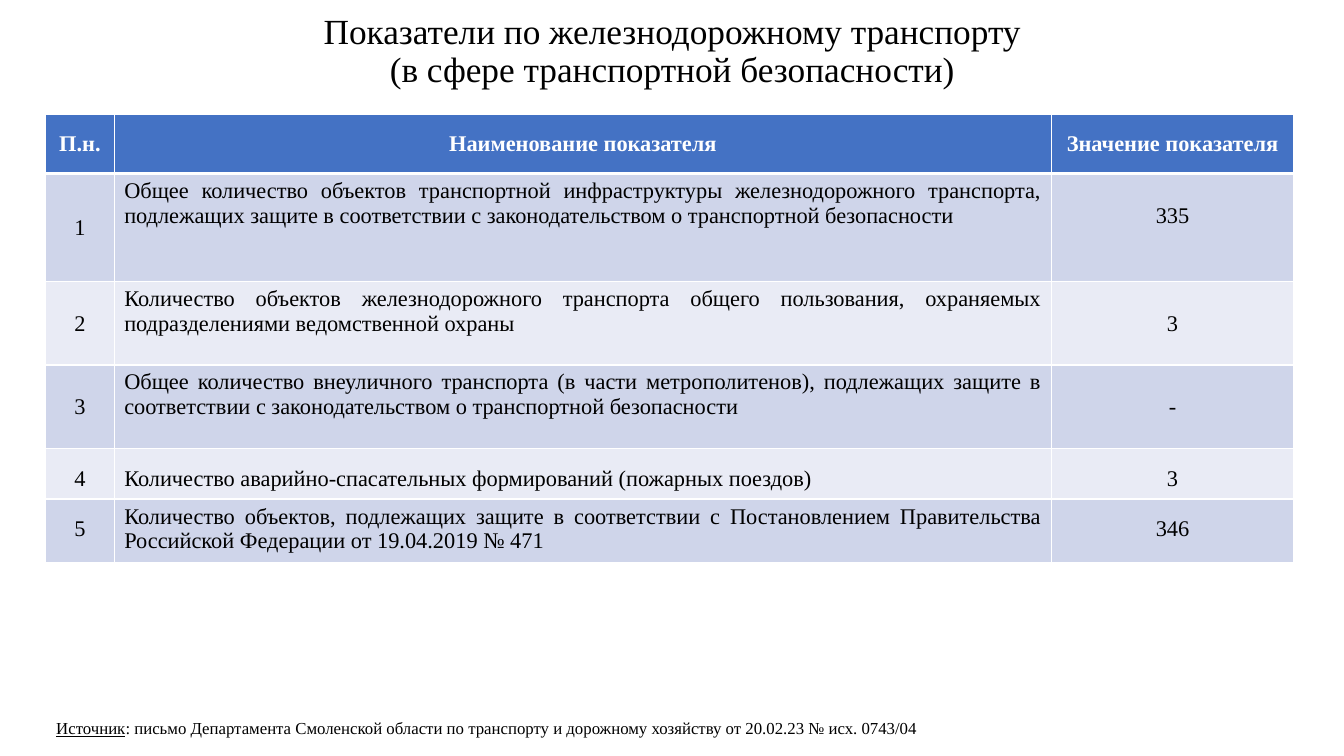
import pptx
import pptx.util
import pptx.dml.color
import pptx.enum.text
import pptx.oxml
import pptx.oxml.ns

RGB = pptx.dml.color.RGBColor
BLACK = RGB(0x00, 0x00, 0x00)
WHITE = RGB(0xFF, 0xFF, 0xFF)
BLUE = RGB(0x44, 0x72, 0xC4)
DARK = RGB(0xCF, 0xD5, 0xEA)
LIGHT = RGB(0xE9, 0xEB, 0xF5)

ALIGN = pptx.enum.text.PP_ALIGN
ANCHOR = pptx.enum.text.MSO_ANCHOR

TITLE = "Показатели по железнодорожному транспорту\v(в сфере транспортной безопасности)"
SOURCE = ("Источник", ": письмо Департамента Смоленской области по транспорту и "
          "дорожному хозяйству от 20.02.23 № исх. 0743/04")
HEAD = ("П.н.", "Наименование показателя", "Значение показателя")
# name, value, line spacing of number, name and value
ROWS = (
    ("Общее количество объектов транспортной инфраструктуры железнодорожного транспорта, "
     "подлежащих защите в соответствии с законодательством о транспортной безопасности",
     "335", (2.5, 1, 2)),
    ("Количество объектов железнодорожного транспорта общего пользования, охраняемых "
     "подразделениями ведомственной охраны", "3", (2, 1, 2)),
    ("Общее количество внеуличного транспорта (в части метрополитенов), подлежащих защите в "
     "соответствии с законодательством о транспортной безопасности", "-", (2, 1, 2)),
    ("Количество аварийно-спасательных формирований (пожарных поездов)",
     "3", (1.5, 1.5, 1.5)),
    ("Количество объектов, подлежащих защите в соответствии с Постановлением Правительства "
     "Российской Федерации от 19.04.2019 № 471", "346", (1.5, 1, 1.5)),
)
WIDTHS = (5.1, 69.75, 18)
HEIGHTS = (7.87, 14.27, 11.07, 11.07, 6.53, 7.87)


class Deck:
    """Places elements on a slide; lengths are percent of its width and height."""

    face = "Times New Roman"

    def __init__(self):
        self.show = pptx.Presentation()
        self.show.slide_width = pptx.util.Inches(13.33)
        self.show.slide_height = pptx.util.Inches(7.5)
        self.slide = self.show.slides.add_slide(self.show.slide_layouts[6])

    def col(self, share):
        return round(self.show.slide_width * share / 100)

    def row(self, share):
        return round(self.show.slide_height * share / 100)

    def box(self, left, top, width, height):
        return self.col(left), self.row(top), self.col(width), self.row(height)

    def style(self, para, size, color=BLACK, bold=False):
        for run in para.runs:
            font = run.font
            font.name, font.size, font.bold = self.face, pptx.util.Pt(size), bold
            font.color.rgb = color

    def text(self, place, parts, size, align=ALIGN.LEFT, anchor=ANCHOR.TOP, space=1.0):
        frame = self.slide.shapes.add_textbox(*self.box(*place)).text_frame
        frame.word_wrap = True
        frame.vertical_anchor = anchor
        para = frame.paragraphs[0]
        para.alignment, para.line_spacing = align, space
        para.text = parts[0]
        for part in parts[1:]:
            para.add_run().text = part
        self.style(para, size)
        return para

    def edge(self, cell, side, width):
        xml = (f'<a:ln{side} {pptx.oxml.ns.nsdecls("a")} w="{pptx.util.Pt(width)}">'
               f'<a:solidFill><a:srgbClr val="{WHITE}"/></a:solidFill></a:ln{side}>')
        cell._tc.get_or_add_tcPr().append(pptx.oxml.parse_xml(xml))

    def cell(self, cell, text, fill, align, space, head):
        cell.text_frame.text = text
        para = cell.text_frame.paragraphs[0]
        para.alignment, para.line_spacing = align, float(space)
        self.style(para, 16, WHITE if head else BLACK, head)
        for side in "LRTB":
            self.edge(cell, side, 3 if head and side == "B" else 1)
        cell.fill.solid()
        cell.fill.fore_color.rgb = fill

    def table(self, left, top, widths, heights, head, rows):
        place = self.box(left, top, sum(widths), sum(heights))
        grid = self.slide.shapes.add_table(len(heights), len(widths), *place).table
        for col, width in zip(grid.columns, widths):
            col.width = self.col(width)
        for row, height in zip(grid.rows, heights):
            row.height = self.row(height)
        for col, text in enumerate(head):
            self.cell(grid.cell(0, col), text, BLUE, ALIGN.CENTER, 1.5, True)
        for num, (name, value, spaces) in enumerate(rows, 1):
            fill = DARK if num % 2 else LIGHT
            for col, text in enumerate((str(num), name, value)):
                align = ALIGN.JUSTIFY if col == 1 else ALIGN.CENTER
                self.cell(grid.cell(num, col), text, fill, align, spaces[col], False)


def main():
    deck = Deck()
    deck.text((6.9, 2.53, 86.27, 8.8), (TITLE,), 25.2, ALIGN.CENTER, ANCHOR.MIDDLE, 0.9)
    deck.table(3.4, 15.07, WIDTHS, HEIGHTS, HEAD, ROWS)
    note = deck.text((3.45, 94.27, 92.87, 4), SOURCE, 12)
    note.runs[0].font.underline = True
    deck.show.save("out.pptx")


if __name__ == "__main__":
    main()
